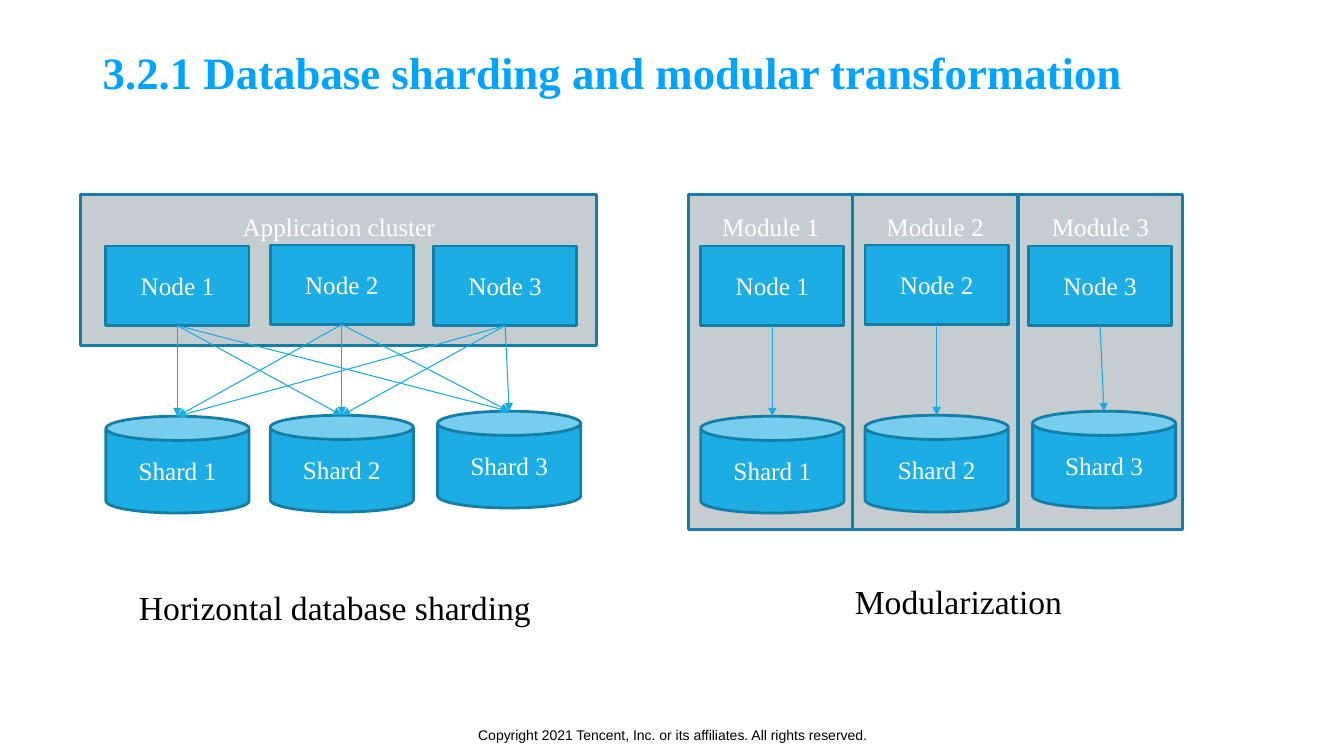
import pptx
import pptx.util
import pptx.dml.color
import pptx.enum.shapes
import pptx.enum.text
import pptx.oxml.xmlchemy

SCALE = 9144
SHAPE = pptx.enum.shapes.MSO_SHAPE
ANCHOR = pptx.enum.text.MSO_ANCHOR
ALIGN = pptx.enum.text.PP_ALIGN
RGB = pptx.dml.color.RGBColor.from_string

THEME = {
    "panel": RGB("C6CDD0"),
    "block": RGB("1CADE4"),
    "border": RGB("147EA6"),
    "arrow": RGB("16ABE2"),
    "title": {"size": pptx.util.Pt(32), "name": "Times New Roman", "bold": True},
    "title_color": RGB("00A4FF"),
    "label": {"size": pptx.util.Pt(18), "name": "Times New Roman"},
    "label_color": RGB("FFFFFF"),
    "caption": {"size": pptx.util.Pt(24), "name": "Times New Roman"},
    "caption_color": RGB("000000"),
    "footer": {"size": pptx.util.Pt(10), "name": "Arial"},
    "footer_color": RGB("000000"),
}

deck = pptx.Presentation()
deck.slide_width, deck.slide_height = 1333 * SCALE, 750 * SCALE
slide = deck.slides.add_slide(deck.slide_layouts[6])


def write(holder, text, style, align, anchor, spacing=1.0):
    frame = holder.text_frame
    frame.word_wrap = True
    frame.vertical_anchor = anchor
    paragraph = frame.paragraphs[0]
    paragraph.alignment = align
    paragraph.line_spacing = spacing
    run = paragraph.add_run()
    run.text = text
    for field, value in THEME[style].items():
        setattr(run.font, field, value)
    run.font.color.rgb = THEME[style + "_color"]


def add_block(kind, box, fill, text, anchor=ANCHOR.MIDDLE):
    block = slide.shapes.add_shape(kind, *[length * SCALE for length in box])
    block.shadow.inherit = False
    block.fill.solid()
    block.fill.fore_color.rgb = THEME[fill]
    block.line.color.rgb = THEME["border"]
    block.line.width = pptx.util.Pt(2)
    write(block, text, "label", ALIGN.CENTER, anchor)
    return block


panels = [
    ("Module 3", (1010, 193, 163, 332)),
    ("Module 2", (846, 193, 163, 332)),
    ("Module 1", (683, 193, 163, 332)),
    ("Application cluster", (80, 193, 512, 150)),
]
for heading, box in panels:
    panel = add_block(SHAPE.RECTANGLE, box, "panel", heading, ANCHOR.TOP)
    panel.text_frame.margin_top = 17 * SCALE

node_places = [(105, 244), (268, 243), (430, 244)]
shard_places = [(105, 413), (268, 412), (434, 408)]
every_pair = [(node, shard) for node in range(3) for shard in range(3)]
own_pair = [(number, number) for number in range(3)]

for shift, routes in [(0, every_pair), (590, own_pair)]:
    nodes = [
        add_block(SHAPE.RECTANGLE, (x + shift, y, 142, 79), "block", f"Node {number}")
        for number, (x, y) in enumerate(node_places, 1)
    ]
    shards = [
        add_block(SHAPE.CAN, (x + shift, y, 142, 96), "block", f"Shard {number}")
        for number, (x, y) in enumerate(shard_places, 1)
    ]
    for node_index, shard_index in routes:
        node, shard = nodes[node_index], shards[shard_index]
        arrow = slide.shapes.add_connector(
            pptx.enum.shapes.MSO_CONNECTOR.STRAIGHT,
            node.left + node.width // 2, node.top + node.height,
            shard.left + shard.width // 2, shard.top,
        )
        arrow.begin_connect(node, 2)
        arrow.line.color.rgb = THEME["arrow"]
        arrow.line.width = pptx.util.Pt(0.75)
        outline = arrow.line._get_or_add_ln()
        tail = outline.makeelement(pptx.oxml.ns.qn("a:tailEnd"), {"type": "triangle"})
        outline.append(tail)
        properties = arrow._element.spPr
        properties.append(properties.makeelement(pptx.oxml.ns.qn("a:effectLst"), {}))

texts = [
    ("3.2.1 Database sharding and modular transformation",
     (92, 25, 1074, 99), "title", ALIGN.LEFT, ANCHOR.MIDDLE, 0.9),
    ("Horizontal database sharding",
     (128, 569, 423, 71), "caption", ALIGN.LEFT, ANCHOR.TOP, 1.2),
    ("Modularization",
     (838, 563, 265, 71), "caption", ALIGN.LEFT, ANCHOR.TOP, 1.2),
    ("Copyright 2021 Tencent, Inc. or its affiliates. All rights reserved.",
     (407, 709, 520, 40), "footer", ALIGN.CENTER, ANCHOR.MIDDLE, 1.0),
]
for text, box, style, align, anchor, spacing in texts:
    holder = slide.shapes.add_textbox(*[length * SCALE for length in box])
    write(holder, text, style, align, anchor, spacing)

deck.save("out.pptx")
